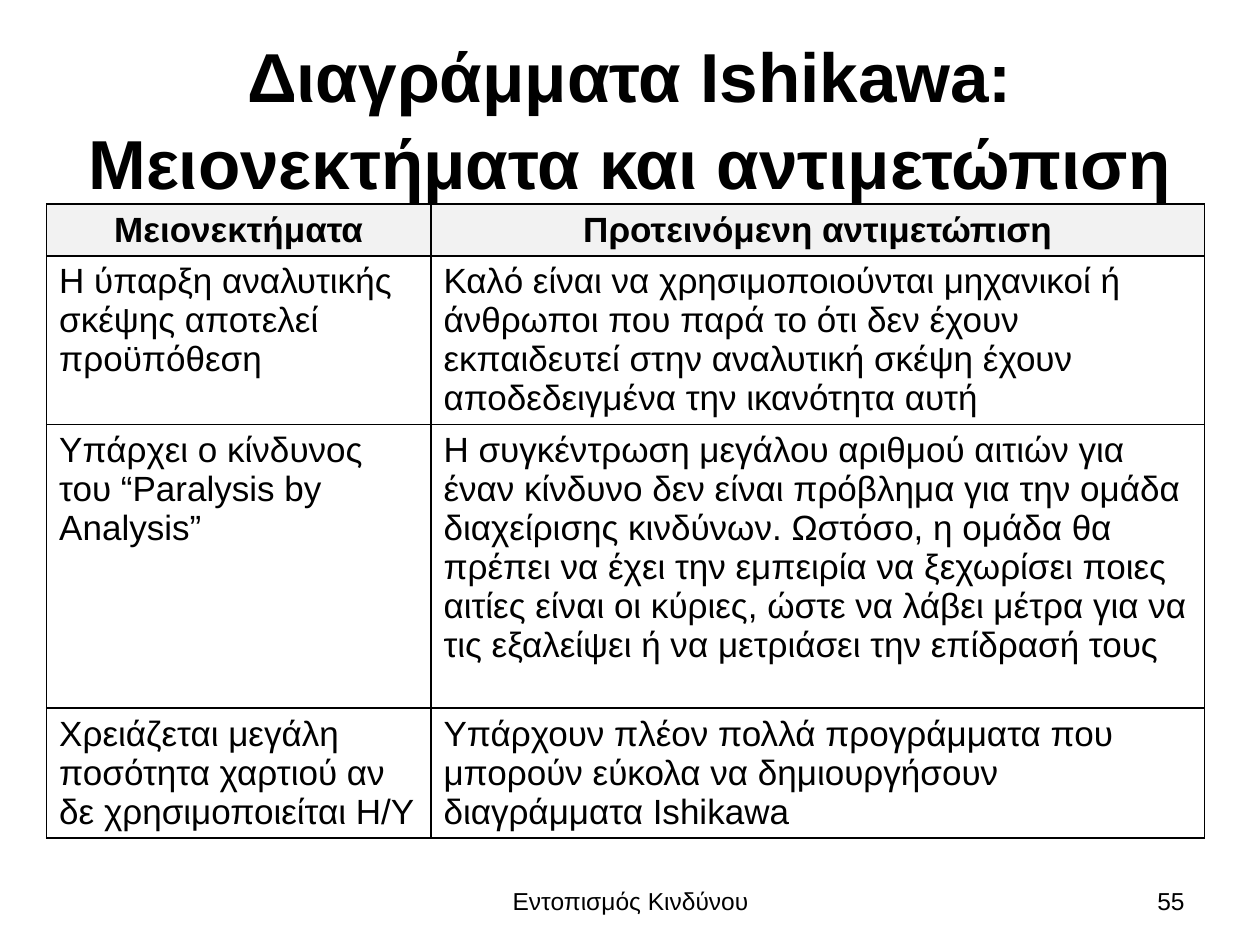
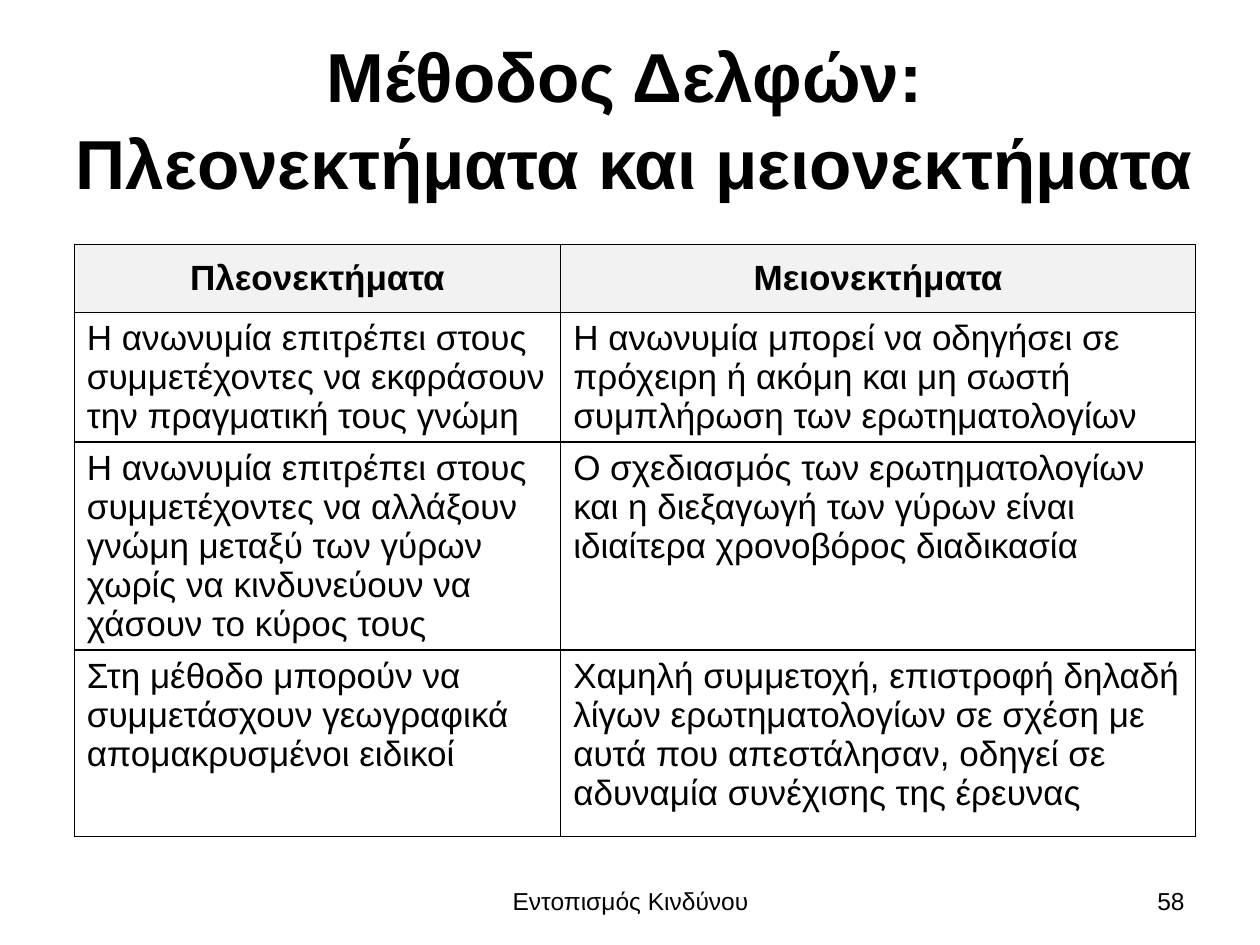
from collections import namedtuple

from lxml import etree
from pptx import Presentation
from pptx.dml.color import RGBColor
from pptx.enum.text import MSO_ANCHOR, MSO_AUTO_SIZE, PP_ALIGN
from pptx.oxml.ns import qn
from pptx.util import Inches, Pt

CENTER, LEFT, RIGHT = PP_ALIGN.CENTER, PP_ALIGN.LEFT, PP_ALIGN.RIGHT
MIDDLE, TOP = MSO_ANCHOR.MIDDLE, MSO_ANCHOR.TOP
NO_AUTOFIT = MSO_AUTO_SIZE.NONE

SLIDE_WIDTH, SLIDE_HEIGHT = Inches(10), Inches(7.5)
FONT = "Arial"
INK, HEADER_FILL = "000000", "F2F2F2"
TITLE_SIZE, TABLE_SIZE, FOOTER_SIZE = 39.6, 20, 14
TITLE_ONLY_LAYOUT = 5
BORDER_SIDES = ("a:lnL", "a:lnR", "a:lnT", "a:lnB")
FOOTER_TEXT = "Εντοπισμός Κινδύνου"

Box = namedtuple("Box", "left top width height")


def share_box(left, top, width, height):
    """Return a box given in percent of the slide's width and height."""
    return Box(int(SLIDE_WIDTH * left / 100), int(SLIDE_HEIGHT * top / 100),
               int(SLIDE_WIDTH * width / 100), int(SLIDE_HEIGHT * height / 100))


FOOTER_BOX = share_box(34.2, 92.67, 31.7, 5.33)
NUMBER_BOX = share_box(71.7, 92.67, 23.3, 5.33)

PAGES = [
    dict(
        title="Διαγράμματα Ishikawa: Μειονεκτήματα και αντιμετώπιση",
        title_box=share_box(5, 4, 90, 16.67),
        table_box=share_box(3.7, 21.6, 91.9, 66.93),
        columns=(305, 614),
        rows=(41, 134, 225, 102),
        cells=[
            ("Μειονεκτήματα", "Προτεινόμενη αντιμετώπιση"),
            ("Η ύπαρξη αναλυτικής σκέψης αποτελεί προϋπόθεση",
             "Καλό είναι να χρησιμοποιούνται μηχανικοί ή άνθρωποι που παρά "
             "το ότι δεν έχουν εκπαιδευτεί στην αναλυτική σκέψη έχουν "
             "αποδεδειγμένα την ικανότητα αυτή"),
            ("Υπάρχει ο κίνδυνος του “Paralysis by Analysis”",
             "Η συγκέντρωση μεγάλου αριθμού αιτιών για έναν κίνδυνο δεν είναι "
             "πρόβλημα για την ομάδα διαχείρισης κινδύνων. Ωστόσο, η ομάδα θα "
             "πρέπει να έχει την εμπειρία να ξεχωρίσει ποιες αιτίες είναι οι "
             "κύριες, ώστε να λάβει μέτρα για να τις εξαλείψει ή να μετριάσει "
             "την επίδρασή τους"),
            ("Χρειάζεται μεγάλη ποσότητα χαρτιού αν δε χρησιμοποιείται Η/Υ",
             "Υπάρχουν πλέον πολλά προγράμματα που μπορούν εύκολα να "
             "δημιουργήσουν διαγράμματα Ishikawa"),
        ],
        number="55",
    ),
    dict(
        title="Μέθοδος Δελφών: \vΠλεονεκτήματα και μειονεκτήματα",
        title_box=share_box(4.3, 4, 92.1, 16.67),
        table_box=share_box(5.9, 25.87, 89, 62.67),
        columns=(386, 504),
        rows=(54, 103, 165, 148),
        cells=[
            ("Πλεονεκτήματα", "Μειονεκτήματα"),
            ("Η ανωνυμία επιτρέπει στους συμμετέχοντες να εκφράσουν την "
             "πραγματική τους γνώμη",
             "Η ανωνυμία μπορεί να οδηγήσει σε πρόχειρη ή ακόμη και μη σωστή "
             "συμπλήρωση των ερωτηματολογίων"),
            ("Η ανωνυμία επιτρέπει στους συμμετέχοντες να αλλάξουν γνώμη "
             "μεταξύ των γύρων χωρίς να κινδυνεύουν να χάσουν το κύρος τους",
             "Ο σχεδιασμός των ερωτηματολογίων και η διεξαγωγή των γύρων "
             "είναι ιδιαίτερα χρονοβόρος διαδικασία"),
            ("Στη μέθοδο μπορούν να συμμετάσχουν γεωγραφικά απομακρυσμένοι "
             "ειδικοί",
             "Χαμηλή συμμετοχή, επιστροφή δηλαδή λίγων ερωτηματολογίων σε "
             "σχέση με αυτά που απεστάλησαν, οδηγεί σε αδυναμία συνέχισης "
             "της έρευνας"),
        ],
        number="58",
    ),
]


def color(hex_text):
    return RGBColor.from_string(hex_text)


def write_text(frame, text, size, align, bold=False):
    frame.word_wrap = True
    para = frame.paragraphs[0]
    para.text = text
    para.alignment = align
    font = para.font
    font.name, font.size, font.bold = FONT, Pt(size), bold
    font.color.rgb = color(INK)
    return para


def add_title(page, box, text):
    title = page.shapes.title
    title.left, title.top, title.width, title.height = box
    frame = title.text_frame
    frame.auto_size = NO_AUTOFIT
    frame.vertical_anchor = MIDDLE
    write_text(frame, text, TITLE_SIZE, CENTER, bold=True).line_spacing = 1.05


def add_footer_part(page, box, text, align):
    frame = page.shapes.add_textbox(*box).text_frame
    frame.vertical_anchor = MIDDLE
    write_text(frame, text, FOOTER_SIZE, align)


def set_borders(cell):
    properties = cell._tc.get_or_add_tcPr()
    for position, side in enumerate(BORDER_SIDES):
        line = etree.Element(qn(side), w=str(Pt(1)))
        fill = etree.SubElement(line, qn("a:solidFill"))
        etree.SubElement(fill, qn("a:srgbClr"), val=INK)
        properties.insert(position, line)


def style_cell(cell, text, is_header):
    write_text(cell.text_frame, text, TABLE_SIZE,
               CENTER if is_header else LEFT, bold=is_header)
    cell.vertical_anchor = MIDDLE if is_header else TOP
    if is_header:
        cell.fill.solid()
        cell.fill.fore_color.rgb = color(HEADER_FILL)
    else:
        cell.fill.background()
    set_borders(cell)


def add_comparison_table(page, box, columns, rows, cells):
    """Fill the box with a table; columns and rows are relative weights."""
    table = page.shapes.add_table(len(rows), len(columns), *box).table
    table.horz_banding = False
    for column, weight in zip(table.columns, columns):
        column.width = int(box.width * weight / sum(columns))
    for row, weight in zip(table.rows, rows):
        row.height = int(box.height * weight / sum(rows))
    for row_index, texts in enumerate(cells):
        for column_index, text in enumerate(texts):
            style_cell(table.cell(row_index, column_index), text, row_index == 0)


def add_comparison_page(deck, title, title_box, table_box, columns, rows, cells,
                        number):
    page = deck.slides.add_slide(deck.slide_layouts[TITLE_ONLY_LAYOUT])
    add_title(page, title_box, title)
    add_comparison_table(page, table_box, columns, rows, cells)
    add_footer_part(page, FOOTER_BOX, FOOTER_TEXT, CENTER)
    add_footer_part(page, NUMBER_BOX, number, RIGHT)


def main():
    deck = Presentation()
    deck.slide_width, deck.slide_height = SLIDE_WIDTH, SLIDE_HEIGHT
    for content in PAGES:
        add_comparison_page(deck, **content)
    deck.save("out.pptx")


if __name__ == "__main__":
    main()
